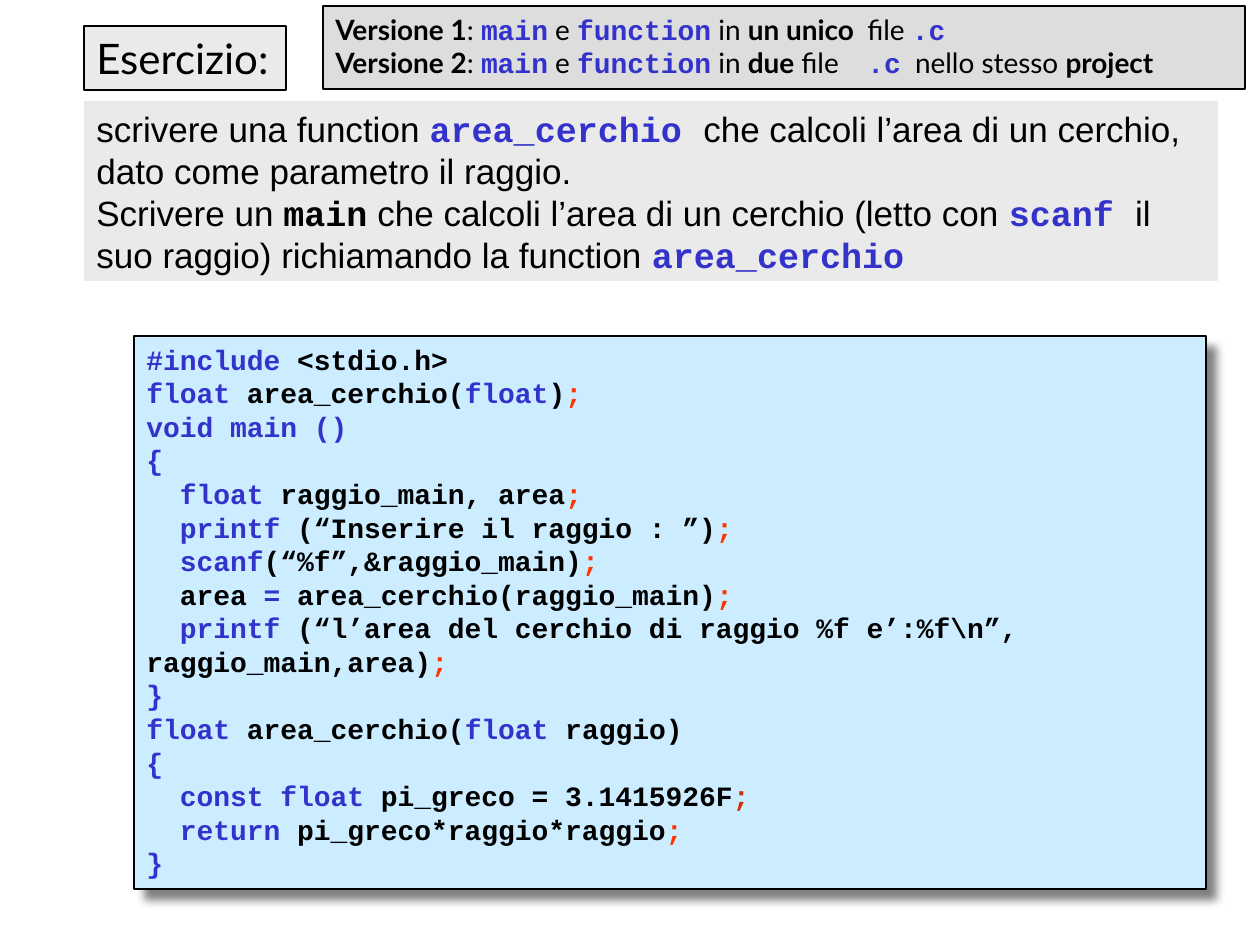
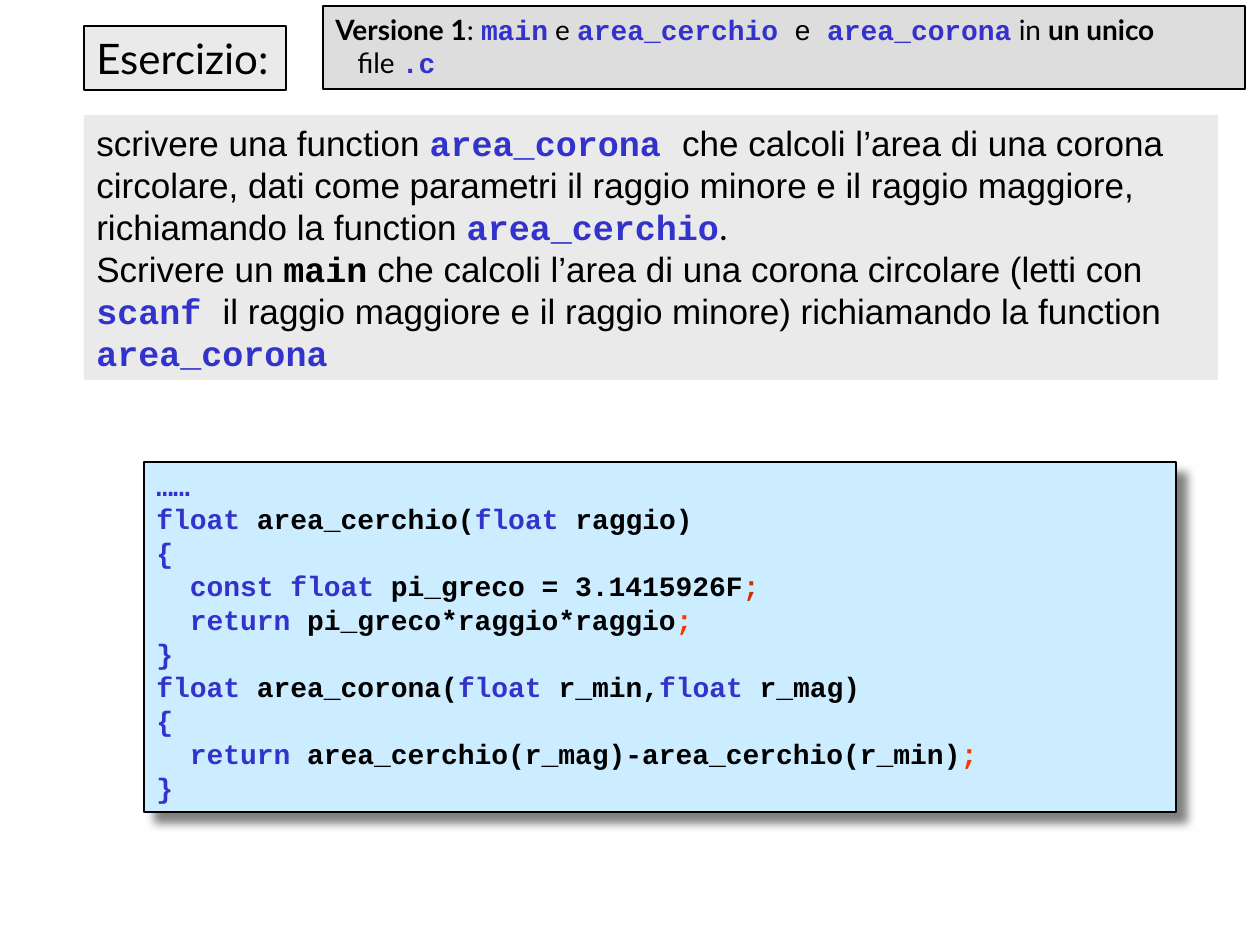
from lxml.etree import SubElement as Sub
from pptx import Presentation as Deck
from pptx.dml.color import RGBColor as RGB
from pptx.enum.shapes import MSO_SHAPE as Kind
from pptx.enum.text import MSO_ANCHOR as Anchor, MSO_AUTO_SIZE as Fit, PP_ALIGN as Align
from pptx.oxml.ns import qn
from pptx.util import Emu, Pt

BLACK = RGB(0x00, 0x00, 0x00)
BLUE = RGB(0x33, 0x33, 0xCC)
RED = RGB(0xFF, 0x33, 0x00)
RUST = RGB(0xCC, 0x33, 0x00)
PALE = RGB(0xEA, 0xEA, 0xEA)
GREY = RGB(0xDD, 0xDD, 0xDD)
SKY = RGB(0xCC, 0xEC, 0xFF)
SHADE = RGB(0x80, 0x80, 0x80)

MONO = "Courier New"
STYLES = {
    "l": ("Lato", BLACK, False),
    "L": ("Lato", BLACK, True),
    "a": ("Arial", BLACK, False),
    "c": (MONO, BLACK, True),
    "k": (MONO, BLUE, True),
    "s": (MONO, RED, True),
    "r": (MONO, RUST, True),
}
BREAK = "n"

CIRCLE = [
    "~kfloat~c area_cerchio(~kfloat~c raggio)",
    "~k{",
    "~k  const float~c pi_greco = 3.1415926F~r;",
    "~k  return ~cpi_greco*raggio*raggio~s;",
    "~k}",
]
MAIN = [
    "~k#include~c <stdio.h>",
    "~kfloat~c area_cerchio(~kfloat~c)~s;",
    "~kvoid main ()",
    "~k{",
    "~k  float~c raggio_main, area~s;",
    "~k  printf ~c(“Inserire il raggio : ”)~s;",
    "~k  scanf~c(“%f”,&raggio_main)~s;",
    "~c  area ~k= ~carea_cerchio(raggio_main)~s;",
    "~k  printf ~c(“l’area del cerchio di raggio %f e’:%f\\n”, raggio_main,area)~s;",
    "~k}",
]
RING = [
    "~kfloat~c area_corona(~kfloat~c r_min,~kfloat~c r_mag)",
    "~k{",
    "~k  return ~carea_cerchio(r_mag)-area_cerchio(r_min)~s;",
    "~k}",
]

TASKS = [
    {
        "files": [
            "~LVersione 1~l: ~kmain~l e ~kfunction~l in ~Lun unico~l\tfile ~k.c",
            "~LVersione 2~l: ~kmain~l e ~kfunction~l in ~Ldue~l file\t~k.c"
            "~l  nello stesso ~Lproject",
        ],
        "brief": [
            "~ascrivere una function ~karea_cerchio ~ache calcoli l’area di un cerchio, "
            "dato come parametro il raggio.",
            "~aScrivere un ~cmain~a che calcoli l’area di un cerchio (letto con ~kscanf "
            "~ail suo raggio) richiamando la function ~karea_cerchio",
        ],
        "brief_box": (84, 101, 1134, 180),
        "code": MAIN + CIRCLE,
        "code_box": (134, 336, 1072, 553),
    },
    {
        "files": [
            "~LVersione 1~l: ~kmain~l e ~karea_cerchio ~ae~k area_corona~l in "
            "~Lun unico~n~lfile ~k.c",
        ],
        "brief": [
            "~ascrivere una function ~karea_corona ~ache calcoli l’area di una corona "
            "circolare, dati come parametri il raggio minore e il raggio maggiore, "
            "richiamando la function ~karea_cerchio~l.",
            "~aScrivere un ~cmain~a che calcoli l’area di una corona circolare (letti con "
            "~kscanf ~ail raggio maggiore e il raggio minore) richiamando la function "
            "~karea_corona",
        ],
        "brief_box": (84, 115, 1134, 265),
        "code": ["~k……"] + CIRCLE + RING,
        "code_box": (144, 462, 1032, 350),
    },
]


def px(count):
    """Turn pixels into EMU."""
    return Emu(round(count * 914400 / 126))


def write(para, marked, size):
    """Fill a paragraph with runs, each led by ~ and a style letter."""
    para.alignment = Align.LEFT
    for piece in marked.split("~")[1:]:
        if piece[0] == BREAK:
            para.add_line_break()
            continue
        run = para.add_run()
        run.text = piece[1:]
        font = run.font
        font.size = Pt(size)
        font.name, font.color.rgb, font.bold = STYLES[piece[0]]


def panel(slide, box, fill, lines, size, edge=0):
    """Draw a filled box with marked text lines and an optional edge."""
    shape = slide.shapes.add_shape(Kind.RECTANGLE, *map(px, box))
    shape.shadow.inherit = False
    shape.fill.solid()
    shape.fill.fore_color.rgb = fill
    if edge:
        shape.line.color.rgb = BLACK
        shape.line.width = Pt(edge)
    else:
        shape.line.fill.background()
    frame = shape.text_frame
    frame.word_wrap = True
    frame.auto_size = Fit.SHAPE_TO_FIT_TEXT
    frame.vertical_anchor = Anchor.TOP
    for index, line in enumerate(lines):
        para = frame.add_paragraph() if index else frame.paragraphs[0]
        write(para, line, size)
    return shape


def title(slide, box):
    """Place the slide heading."""
    panel(slide, box, PALE, ["~lEsercizio:"], 24, 0.75)


def files(slide, box, lines):
    """Place the list of versions, with a hanging indent and a tab stop."""
    shape = panel(slide, box, GREY, lines, 16, 1.5)
    for para in shape.text_frame.paragraphs:
        props = para._p.get_or_add_pPr()
        if len(lines) == 1:
            props.set("marL", str(px(22)))
            props.set("indent", str(-px(22)))
        else:
            tabs = Sub(props, qn("a:tabLst"))
            Sub(tabs, qn("a:tab"), pos=str(px(532)), algn="l")


def brief(slide, box, lines):
    """Place the text of the exercise."""
    panel(slide, box, PALE, lines, 20)


def code(slide, box, lines):
    """Place the listing on a box with a soft shadow."""
    shape = panel(slide, box, SKY, lines, 16, 0.75)
    effect = shape._element.spPr.find(qn("a:effectLst"))
    cast = Sub(effect, qn("a:outerShdw"), blurRad=str(Pt(5)), dist=str(Pt(8.5)),
               dir=str(45 * 60000), algn="tl", rotWithShape="0")
    Sub(cast, qn("a:srgbClr"), val=str(SHADE))


def page(deck, task):
    """Add one exercise slide."""
    slide = deck.slides.add_slide(deck.slide_layouts[6])
    title(slide, (84, 26, 202, 64))
    files(slide, (323, 6, 922, 83), task["files"])
    brief(slide, task["brief_box"], task["brief"])
    code(slide, task["code_box"], task["code"])


def main():
    """Build the deck."""
    deck = Deck()
    deck.slide_width, deck.slide_height = px(1260), px(945)
    for task in TASKS:
        page(deck, task)
    deck.save("out.pptx")


if __name__ == "__main__":
    main()
